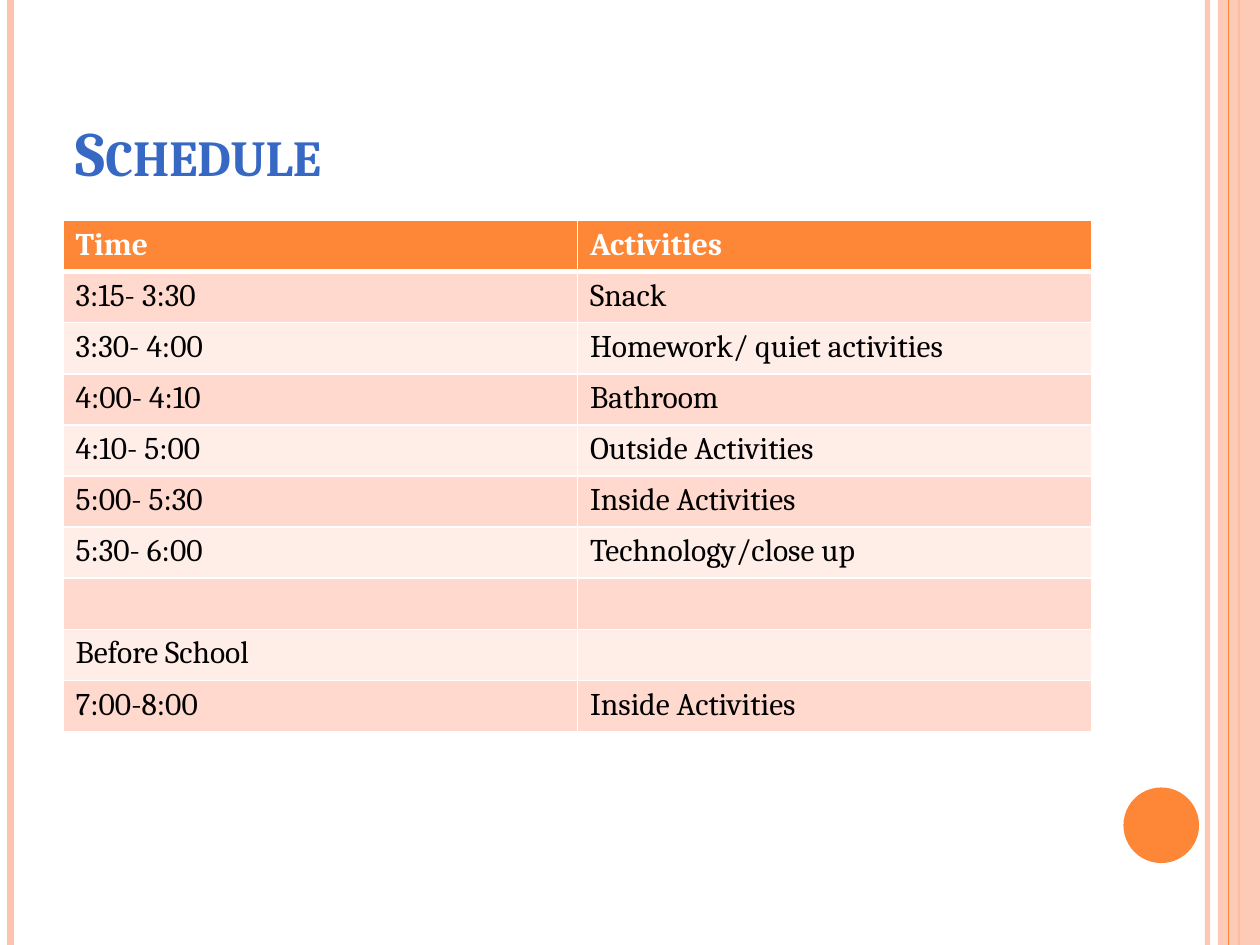
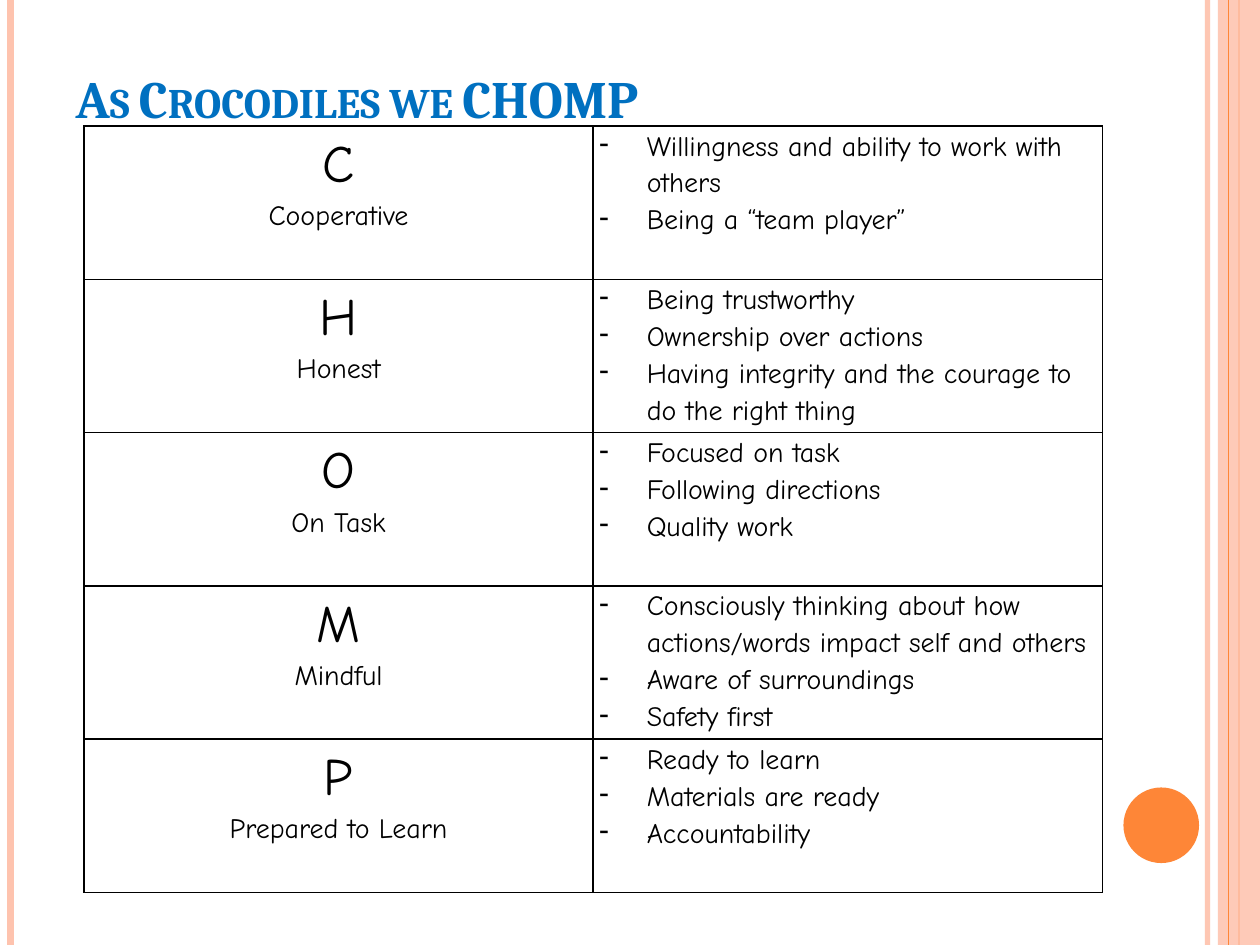
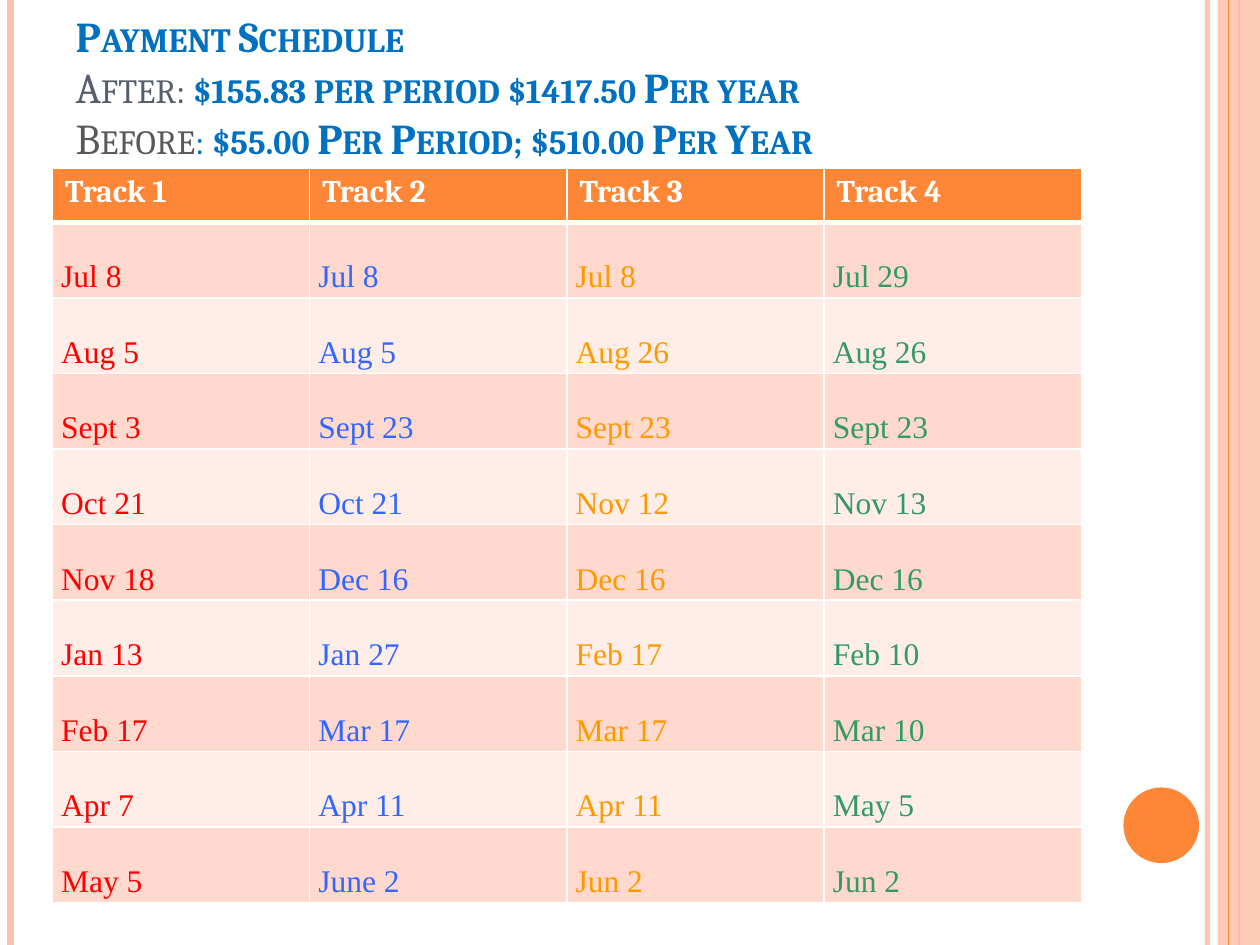
from dataclasses import dataclass, replace
from typing import Optional

from lxml import etree
from pptx import Presentation
from pptx import util as u
from pptx.dml.color import RGBColor
from pptx.enum import shapes, text
from pptx.oxml import ns


# Theme: colours, fonts and type sizes
@dataclass(frozen=True)
class Theme:
    orange: str = "FE8637"
    peach: str = "FEC3AE"
    white: str = "FFFFFF"
    black: str = "000000"
    bands: tuple = ("FFD9CE", "FFEDE8")
    title_blue: str = "3668C4"
    blue: str = "0070C0"
    slate: str = "575F6D"
    grey: str = "595959"
    tracks: tuple = ("FF0000", "3366FF", "FF9900", "339966")
    serif: str = "Cambria"
    comic: str = "Comic Neue"
    dates: str = "Times New Roman"
    title: float = 36
    title_mid: float = 30
    title_small: float = 24.3
    body: float = 18
    letter: float = 30
    trait: float = 16


T = Theme()
WIDTH, HEIGHT = 720, 540


# Descriptions of repeated elements, lengths in points
@dataclass(frozen=True)
class Box:
    x: float
    y: float
    w: float
    h: float


@dataclass(frozen=True)
class Rule:
    x: float
    color: str
    width: float
    alpha: int = 100


@dataclass(frozen=True)
class Span:
    text: str
    color: str = T.black
    size: float = T.body
    font: str = T.serif
    bold: bool = False
    small_caps: bool = False


@dataclass(frozen=True)
class Para:
    span: Span
    align: text.PP_ALIGN = text.PP_ALIGN.LEFT
    spacing: Optional[float] = None
    bullet: Optional[str] = None
    indent: float = 27


@dataclass(frozen=True)
class Cell:
    paras: tuple = ()
    fill: Optional[str] = None
    insets: tuple = (7.2, 3.6, 7.2, 3.6)
    anchor: text.MSO_ANCHOR = text.MSO_ANCHOR.TOP


@dataclass(frozen=True)
class Grid:
    x: float
    y: float
    col_width: float
    row_heights: tuple
    rows: list
    border: str
    header: bool = True


RULES = (
    Rule(690, T.peach, 3, 93),
    Rule(6, T.peach, 4.5),
    Rule(708, T.orange, 1.5),
    Rule(702, T.orange, 0.75),
)
SIDE_BAND = Box(696, 0, 24, HEIGHT)
DISC = Box(642, 450, 43.2, 43.2)


# Helpers
def rgb(color: str) -> RGBColor:
    return RGBColor.from_string(color)


def points(box: Box) -> tuple:
    return tuple(u.Pt(v) for v in (box.x, box.y, box.w, box.h))


def sub(parent, tag: str, **attrs):
    return etree.SubElement(parent, ns.qn(tag), **attrs)


def set_alpha(sp, percent: int) -> None:
    for clr in sp.element.spPr.iter(ns.qn("a:srgbClr")):
        sub(clr, "a:alpha", val=str(percent * 1000))


def add_run(p, span: Span) -> None:
    r = p.add_run()
    r.text = span.text
    f = r.font
    f.name, f.size, f.bold = span.font, u.Pt(span.size), span.bold
    f.color.rgb = rgb(span.color)
    if span.small_caps:
        r._r.get_or_add_rPr().set("cap", "small")


# Shared decoration, kept on the layout
def add_rule(s, rule: Rule):
    x = u.Pt(rule.x)
    line = s.shapes.add_connector(shapes.MSO_CONNECTOR.STRAIGHT, x, 0, x, u.Pt(HEIGHT))
    line.line.color.rgb = rgb(rule.color)
    line.line.width = u.Pt(rule.width)
    if rule.alpha < 100:
        set_alpha(line, rule.alpha)
    sub(line.element.spPr, "a:effectLst")
    return line


def add_solid(s, kind, box: Box, color: str):
    sp = s.shapes.add_shape(kind, *points(box))
    sp.shadow.inherit = False
    sp.fill.solid()
    sp.fill.fore_color.rgb = rgb(color)
    sp.line.fill.background()
    return sp


def decorate(s, layout) -> None:
    parts = [add_rule(s, rule) for rule in RULES[:3]]
    band = add_solid(s, shapes.MSO_SHAPE.RECTANGLE, SIDE_BAND, T.peach)
    set_alpha(band, 87)
    parts += [band, add_rule(s, RULES[3])]
    parts.append(add_solid(s, shapes.MSO_SHAPE.OVAL, DISC, T.orange))
    for number, sp in enumerate(parts, start=100):
        sp.element.xpath(".//p:cNvPr")[0].set("id", str(number))
        layout.shapes.element.append(sp.element)


# Titles: each line is a tuple of spans
def set_title(s, box: Box, lines: tuple, bottom: float = 3.6) -> None:
    sp = s.shapes.title
    sp.left, sp.top, sp.width, sp.height = points(box)
    tf = sp.text_frame
    tf.auto_size = text.MSO_AUTO_SIZE.NONE
    tf.word_wrap = True
    tf.vertical_anchor = text.MSO_ANCHOR.BOTTOM
    tf.margin_bottom = u.Pt(bottom)
    p = tf.paragraphs[0]
    p.alignment = text.PP_ALIGN.LEFT
    for i, line in enumerate(lines):
        if i:
            p.add_line_break()
        for span in line:
            add_run(p, replace(span, small_caps=True))


# Tables
def set_borders(cell, color: str, top: float, bottom: float) -> None:
    tcPr = cell._tc.get_or_add_tcPr()
    for side, width in (("L", 1), ("R", 1), ("T", top), ("B", bottom)):
        ln = sub(tcPr, f"a:ln{side}", w=str(u.Pt(width)))
        sub(sub(ln, "a:solidFill"), "a:srgbClr", val=color)


def write_para(p, para: Para) -> None:
    p.alignment = para.align
    if para.spacing:
        p.line_spacing = para.spacing
    if para.bullet:
        pPr = p._p.get_or_add_pPr()
        pPr.set("marL", str(u.Pt(para.indent)))
        pPr.set("indent", str(u.Pt(-para.indent)))
        sub(pPr, "a:buChar", char=para.bullet)
    add_run(p, para.span)


def fill_cell(cell, data: Cell) -> None:
    if data.fill:
        cell.fill.solid()
        cell.fill.fore_color.rgb = rgb(data.fill)
    else:
        cell.fill.background()
    (cell.margin_left, cell.margin_top,
     cell.margin_right, cell.margin_bottom) = (u.Pt(v) for v in data.insets)
    cell.vertical_anchor = data.anchor
    tf = cell.text_frame
    for i, para in enumerate(data.paras):
        write_para(tf.add_paragraph() if i else tf.paragraphs[0], para)


def add_grid(s, grid: Grid) -> None:
    n_cols = len(grid.rows[0])
    box = Box(grid.x, grid.y, grid.col_width * n_cols, sum(grid.row_heights))
    table = s.shapes.add_table(len(grid.rows), n_cols, *points(box)).table
    table.first_row = grid.header
    table.horz_banding = False
    for col in table.columns:
        col.width = u.Pt(grid.col_width)
    for i, (height, row) in enumerate(zip(grid.row_heights, grid.rows)):
        table.rows[i].height = u.Pt(height)
        top = 3 if grid.header and i == 1 else 1
        bottom = 3 if grid.header and i == 0 else 1
        for j, data in enumerate(row):
            set_borders(table.cell(i, j), grid.border, top, bottom)
            fill_cell(table.cell(i, j), data)


def header_row(labels: tuple) -> list:
    return [Cell((Para(Span(label, T.white, bold=True)),), T.orange) for label in labels]


def band_color(i: int) -> str:
    return T.bands[i % len(T.bands)]


# Content
SCHEDULE = (
    ("3:15- 3:30", "Snack"),
    ("3:30- 4:00", "Homework/ quiet activities"),
    ("4:00- 4:10", "Bathroom"),
    ("4:10- 5:00", "Outside Activities"),
    ("5:00- 5:30", "Inside Activities"),
    ("5:30- 6:00", "Technology/close up"),
    ("", ""),
    ("Before School", ""),
    ("7:00-8:00", "Inside Activities"),
)
CHOMP = (
    ("C", "Cooperative", ("Willingness and ability to work with others",
                          "Being a “team player”")),
    ("H", "Honest", ("Being trustworthy", "Ownership over actions",
                     "Having integrity and the courage to do the right thing")),
    ("O", "On Task", ("Focused on task", "Following directions", "Quality work")),
    ("M", "Mindful", ("Consciously thinking about how actions/words impact self and others",
                      "Aware of surroundings", "Safety first")),
    ("P", "Prepared to Learn", ("Ready to learn", "Materials are ready", "Accountability")),
)
PAYMENTS = (
    ("Jul 8", "Jul 8", "Jul 8", "Jul 29"),
    ("Aug 5", "Aug 5", "Aug 26", "Aug 26"),
    ("Sept 3", "Sept 23", "Sept 23", "Sept 23"),
    ("Oct 21", "Oct 21", "Nov 12", "Nov 13"),
    ("Nov 18", "Dec 16", "Dec 16", "Dec 16"),
    ("Jan 13", "Jan 27", "Feb 17", "Feb 10"),
    ("Feb 17", "Mar 17", "Mar 17", "Mar 10"),
    ("Apr 7", "Apr 11", "Apr 11", "May 5"),
    ("May 5", "June 2", "Jun 2", "Jun 2"),
)


# Slides
def schedule_slide(s) -> None:
    set_title(s, Box(36, 21.6, 588, 90),
              ((Span("Schedule", T.title_blue, T.title, bold=True),),))
    rows = [header_row(("Time", "Activities"))]
    for i, entry in enumerate(SCHEDULE):
        rows.append([Cell((Para(Span(t)),) if t else (), band_color(i)) for t in entry])
    add_grid(s, Grid(36, 126, 294, (29.2,) * len(rows), rows, T.white))


def chomp_slide(s) -> None:
    set_title(s, Box(36, 21.6, 588, 56),
              ((Span("As Crocodiles we CHOMP", T.blue, T.title_mid, bold=True),),))
    insets = (3.6, 0, 3.6, 0)
    center = text.PP_ALIGN.CENTER
    rows = []
    for letter, trait, points_made in CHOMP:
        heading = tuple(Para(Span(t, size=size, font=T.comic), center, 1.15)
                        for t, size in ((letter, T.letter), (trait, T.trait)))
        bullets = tuple(Para(Span(t, size=T.trait, font=T.comic), spacing=1.15, bullet="-")
                        for t in points_made)
        rows.append([Cell(heading, insets=insets), Cell(bullets, insets=insets)])
    add_grid(s, Grid(48, 72, 291, (87.6,) * len(rows), rows, T.black, header=False))


def payment_slide(s) -> None:
    def part(t: str, color: str = T.blue, bold: bool = True) -> Span:
        return Span(t, color, T.title_small, bold=bold)

    set_title(s, Box(36, 14.4, 612, 111.6), (
        (part("Payment Schedule"),),
        (part("After: ", T.slate, False), part("$155.83 per period $1417.50 Per year")),
        (part("Before", T.grey, False), part(": ", bold=False),
         part("$55.00 Per Period; $510.00 Per Year")),
    ), bottom=33)
    rows = [header_row(tuple(f"Track {n}" for n in range(1, 5)))]
    for i, dates in enumerate(PAYMENTS):
        rows.append([Cell((Para(Span(t, color, font=T.dates)),), band_color(i),
                          (5, 0, 5, 2), text.MSO_ANCHOR.BOTTOM)
                     for t, color in zip(dates, T.tracks)])
    heights = (31,) + (43.2,) * len(PAYMENTS)
    add_grid(s, Grid(30, 96, 147, heights, rows, T.white))


def main() -> None:
    prs = Presentation()
    prs.slide_width, prs.slide_height = u.Pt(WIDTH), u.Pt(HEIGHT)
    layout = prs.slide_layouts.get_by_name("Title Only")
    for i, build in enumerate((schedule_slide, chomp_slide, payment_slide)):
        s = prs.slides.add_slide(layout)
        if i == 0:
            decorate(s, layout)
        build(s)
    prs.save("out.pptx")


if __name__ == "__main__":
    main()
